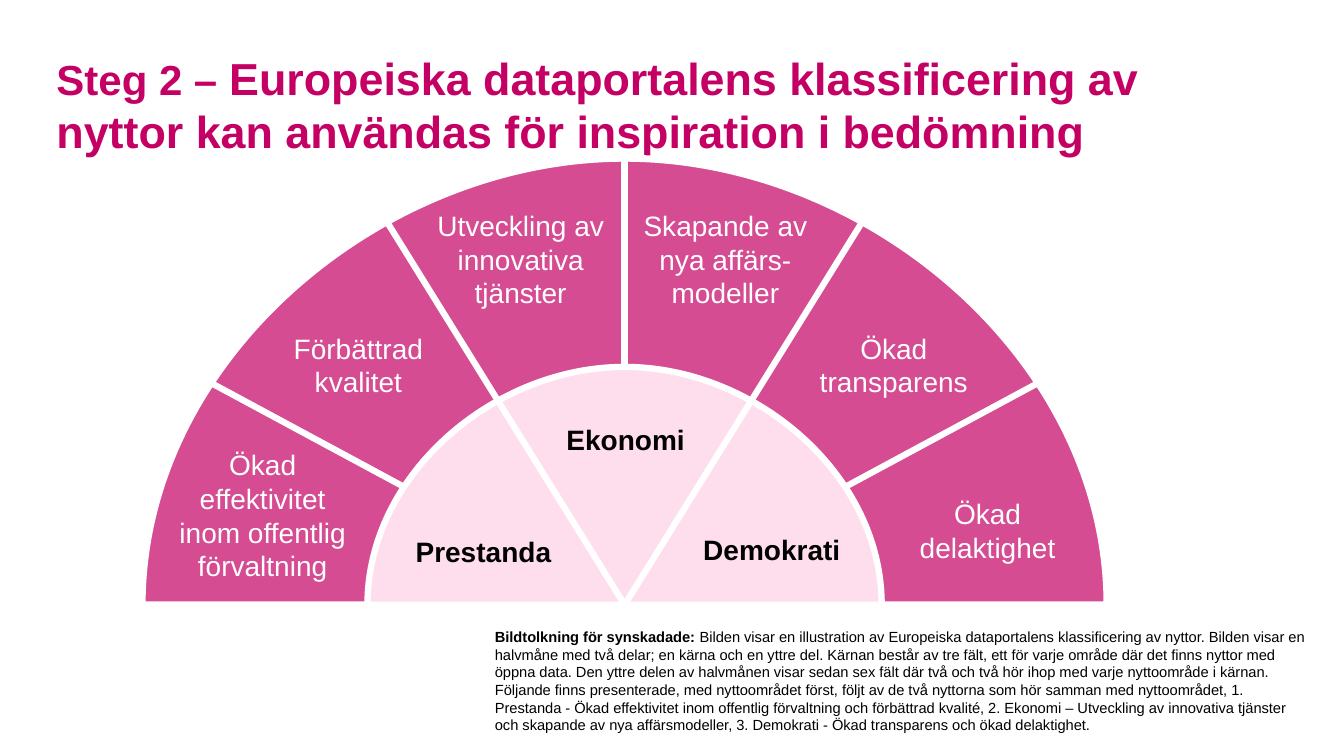
from lxml import etree
from pptx import Presentation
from pptx import util as u
from pptx.dml.color import RGBColor
from pptx.enum import shapes, text
from pptx.oxml.ns import qn

WIDE, HIGH = 13.33, 7.5
FONT = "Arial"
HUES = {"rose": "C40064", "pale": "FEDEED", "white": "FFFFFF", "black": "000000"}
TITLE = [("Steg 2 – ", 30, True),
         ("Europeiska dataportalens klassificering av nyttor kan användas "
          "för inspiration i bedömning", 32, True)]
NOTE = [("Bildtolkning för synskadade: ", 10.5, True),
        ("Bilden visar en illustration av Europeiska dataportalens klassificering av nyttor. "
         "Bilden visar en halvmåne med två delar; en kärna och en yttre del. Kärnan består av "
         "tre fält, ett för varje område där det finns nyttor med öppna data. Den yttre delen av "
         "halvmånen visar sedan sex fält där två och två hör ihop med varje nyttoområde i kärnan. "
         "Följande finns presenterade, med nyttoområdet först, följt av de två nyttorna som hör "
         "samman med nyttoområdet, 1. Prestanda - Ökad effektivitet inom offentlig förvaltning "
         "och förbättrad kvalité, 2. Ekonomi – Utveckling av innovativa tjänster och skapande av "
         "nya affärsmodeller, 3. Demokrati - Ökad transparens och ökad delaktighet.", 10.5, False)]
CORE = [("Prestanda", -1.4, 5.47, 1.96), ("Ekonomi", 0.01, 4.36, 1.69),
        ("Demokrati", 1.46, 5.45, 1.85)]
RIM = [("Ökad effektivitet inom offentlig förvaltning", -3.59, 5.11, 1.69),
       ("Förbättrad kvalitet", -2.64, 3.62, 1.77),
       ("Utveckling av innovativa tjänster", -1.03, 2.57, 1.9),
       ("Skapande av nya affärs-modeller", 1, 2.57, 1.69),
       ("Ökad transparens", 2.67, 3.62, 1.95),
       ("Ökad delaktighet", 3.6, 5.26, 1.89)]


def tint(hue):
    """Return the named colour."""
    return RGBColor.from_string(HUES[hue])


def write(box, runs, hue="black", align="LEFT", anchor="TOP", inset=(0, 0)):
    """Fill a shape with formatted runs of (words, size, bold)."""
    frame = box.text_frame
    frame.word_wrap = True
    frame.auto_size = text.MSO_AUTO_SIZE.NONE
    frame.vertical_anchor = getattr(text.MSO_ANCHOR, anchor)
    frame.margin_left = frame.margin_right = u.Inches(inset[0])
    frame.margin_top = frame.margin_bottom = u.Inches(inset[1])
    para = frame.paragraphs[0]
    para.alignment = getattr(text.PP_ALIGN, align)
    para.line_spacing = 1.0
    for words, size, bold in runs:
        run = para.add_run()
        run.text = words
        font = run.font
        font.name, font.size, font.bold = FONT, u.Pt(size), bold
        font.color.rgb = tint(hue)


def label(slide, words, mid, size, bold=False, hue="black"):
    """Centre a text label on a point."""
    box = slide.shapes.add_textbox(*(u.Inches(v) for v in (
        mid[0] - size[0] / 2, mid[1] - size[1] / 2, *size)))
    write(box, [(words, 20, bold)], hue=hue, align="CENTER", anchor="MIDDLE")


def bend(line, *dots):
    """Turn a straight segment into a curve through control dots."""
    curve = etree.Element(qn("a:cubicBezTo"))
    for x, y in dots:
        etree.SubElement(curve, qn("a:pt"), x=str(int(x)), y=str(int(y)))
    line.getparent().replace(line, curve)


def dome(slide, box, hue, edge, alpha=None):
    """Draw a half-moon that fills the box."""
    left, top, wide, high = (u.Inches(v) for v in box)
    mid, base = left + wide // 2, top + high
    pen = slide.shapes.build_freeform(left, base)
    pen.add_line_segments([(mid, top), (left + wide, base), (mid, base)], close=True)
    moon = pen.convert_to_shape()
    rise, fall = list(moon._element.iter(qn("a:lnTo")))[:2]
    half = wide // 2
    bend(rise, (0, 0.45 * high), (0.495 * half, 0), (half, 0))
    bend(fall, (1.505 * half, 0), (wide, 0.45 * high), (wide, high))
    moon.shadow.inherit = False
    moon.fill.solid()
    moon.fill.fore_color.rgb = tint(hue)
    moon.line.color.rgb = tint("white")
    moon.line.width = u.Pt(edge)
    if alpha:
        shade = moon._element.spPr.find(qn("a:solidFill"))[0]
        etree.SubElement(shade, qn("a:alpha"), val=str(alpha * 1000))


def spoke(slide, start, end):
    """Draw a white divider between two points."""
    line = slide.shapes.add_connector(
        shapes.MSO_CONNECTOR.STRAIGHT, *(u.Inches(v) for v in (*start, *end)))
    line.line.color.rgb = tint("white")
    line.line.width = u.Pt(4.5)
    etree.SubElement(line._element.spPr, qn("a:effectLst"))


def fan(slide, box):
    """Draw the half-moon with its fields and labels."""
    left, top, wide, high = box
    mid, base = left + wide / 2, top + high
    core = (mid - 2.55, base - 2.36, 5.1, 2.36)
    dome(slide, box, "rose", 5, alpha=70)
    dome(slide, core, "pale", 4.5)
    spoke(slide, (mid, top), (mid, core[1]))
    for side in (-1, 1):
        spoke(slide, (mid + side * 2.37, top + 0.61), (mid, base))
        spoke(slide, (mid + side * 4.1, top + 2.23), (mid + side * 2.17, top + 3.27))
    for words, dx, y, span in CORE:
        label(slide, words, (mid + dx, y), (span, 0.54), bold=True)
    for words, dx, y, span in RIM:
        label(slide, words, (mid + dx, y), (span, 1.05), hue="white")


def head(slide, box):
    """Place and format the title."""
    title = slide.shapes.title
    title.left, title.top, title.width, title.height = (u.Inches(v) for v in box)
    write(title, TITLE, hue="rose")


def note(slide, box):
    """Place the description under the half-moon."""
    write(slide.shapes.add_textbox(*(u.Inches(v) for v in box)), NOTE, inset=(0.1, 0.05))


def main():
    """Build and save the deck."""
    deck = Presentation()
    deck.slide_width, deck.slide_height = u.Inches(WIDE), u.Inches(HIGH)
    slide = deck.slides.add_slide(deck.slide_layouts[5])
    fan(slide, (1.41, 1.57, 9.57, 4.43))
    head(slide, (0.56, 0.5, 11, 0.91))
    note(slide, (4.81, 6.18, 8.32, 1.16))
    deck.save("out.pptx")


if __name__ == "__main__":
    main()
